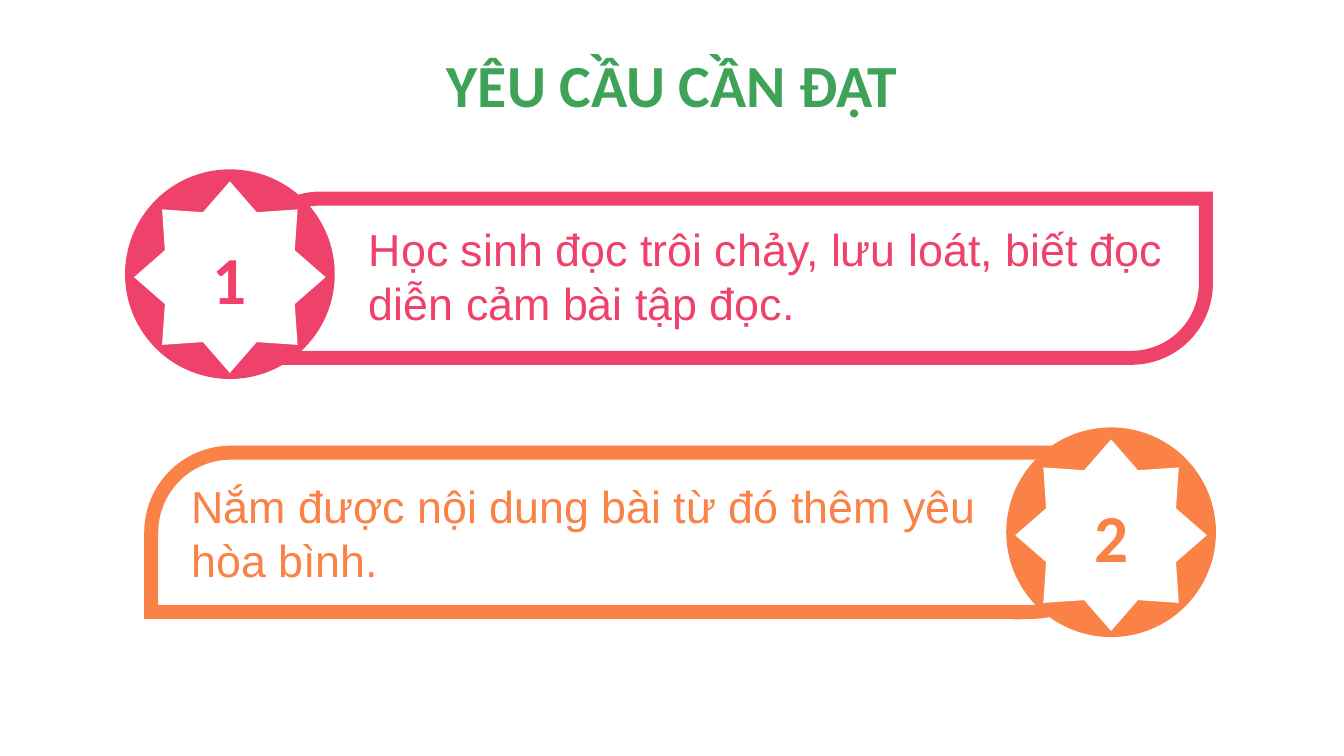
from lxml import etree
from pptx import Presentation
from pptx import util as u
from pptx.dml.color import RGBColor
from pptx.enum import shapes, text
from pptx.oxml import ns

WHITE = RGBColor(0xFF, 0xFF, 0xFF)
GREEN = RGBColor(0x3E, 0xA2, 0x58)
PINK = RGBColor(0xEE, 0x42, 0x6B)
ORANGE = RGBColor(0xFB, 0x82, 0x46)


class GoalSlide:
    heading_font = "Calibri"
    body_font = "Arial"
    disc_size = 2.08
    star_size = 1.9

    def __init__(self, presentation):
        self.slide = presentation.slides.add_slide(presentation.slide_layouts[5])

    def set_words(self, shape, words, font, size, color, bold, align, anchor):
        frame = shape.text_frame
        frame.text = words
        frame.vertical_anchor = anchor
        paragraph = frame.paragraphs[0]
        paragraph.alignment = align
        style = paragraph.runs[0].font
        style.name, style.size, style.bold = font, u.Pt(size), bold
        style.color.rgb = color

    def title(self, words, left, top, width, height):
        shape = self.slide.shapes.title
        shape.left, shape.top = u.Inches(left), u.Inches(top)
        shape.width, shape.height = u.Inches(width), u.Inches(height)
        self.set_words(shape, words, self.heading_font, 42.7, GREEN, True,
                       text.PP_ALIGN.CENTER, text.MSO_ANCHOR.MIDDLE)
        shape.text_frame.word_wrap = False
        shape.text_frame.auto_size = text.MSO_AUTO_SIZE.SHAPE_TO_FIT_TEXT

    def banner(self, left, top, color, rounding, rotation):
        shape = self.slide.shapes.add_shape(
            shapes.MSO_SHAPE.ROUND_2_DIAG_RECTANGLE,
            u.Inches(left), u.Inches(top), u.Inches(9.52), u.Inches(1.58))
        shape.adjustments[0], shape.adjustments[1] = rounding, 0
        shape.rotation = rotation
        shape.shadow.inherit = False
        shape.fill.background()
        shape.line.color.rgb = color
        shape.line.width = u.Pt(10)
        # Sharp outline corners
        outline = shape.element.spPr.find(ns.qn("a:ln"))
        etree.SubElement(outline, ns.qn("a:miter"), lim="800000")

    def disc_part(self, group, kind, left, top, size, color):
        shape = group.shapes.add_shape(
            kind, u.Inches(left), u.Inches(top), u.Inches(size), u.Inches(size))
        shape.shadow.inherit = False
        shape.fill.solid()
        shape.fill.fore_color.rgb = color
        shape.line.fill.background()
        return shape

    def badge(self, number, left, top, color):
        group = self.slide.shapes.add_group_shape()
        self.disc_part(group, shapes.MSO_SHAPE.FLOWCHART_CONNECTOR,
                       left, top, self.disc_size, color)
        star = self.disc_part(group, shapes.MSO_SHAPE.STAR_8_POINT,
                              left + 0.09, top + 0.12, self.star_size, WHITE)
        star.adjustments[0] = 0.367
        self.set_words(star, number, self.heading_font, 48, color, True,
                       text.PP_ALIGN.CENTER, text.MSO_ANCHOR.MIDDLE)

    def body(self, words, left, top, color):
        box = self.slide.shapes.add_textbox(
            u.Inches(left), u.Inches(top), u.Inches(8.22), u.Inches(1.18))
        self.set_words(box, words, self.body_font, 32, color, False,
                       text.PP_ALIGN.LEFT, text.MSO_ANCHOR.TOP)
        box.text_frame.word_wrap = True
        box.text_frame.auto_size = text.MSO_AUTO_SIZE.SHAPE_TO_FIT_TEXT


def main():
    presentation = Presentation()
    presentation.slide_width = u.Inches(13.33)
    presentation.slide_height = u.Inches(7.5)
    goals = GoalSlide(presentation)

    # Heading
    goals.title("YÊU CẦU CẦN ĐẠT", 4.31, 0.42, 4.72, 0.82)

    # First goal, badge on the left
    goals.banner(2.44, 1.97, PINK, 0.467, 0)
    goals.badge("1", 1.24, 1.68, PINK)
    goals.body("Học sinh đọc trôi chảy, lưu loát, biết đọc diễn cảm bài tập đọc.",
               3.56, 2.15, PINK)

    # Second goal, badge on the right
    goals.banner(1.5, 4.49, ORANGE, 0.5, 180)
    goals.badge("2", 9.98, 4.24, ORANGE)
    goals.body("Nắm được nội dung bài từ đó thêm yêu hòa bình.", 1.8, 4.7, ORANGE)

    presentation.save("out.pptx")


if __name__ == "__main__":
    main()
